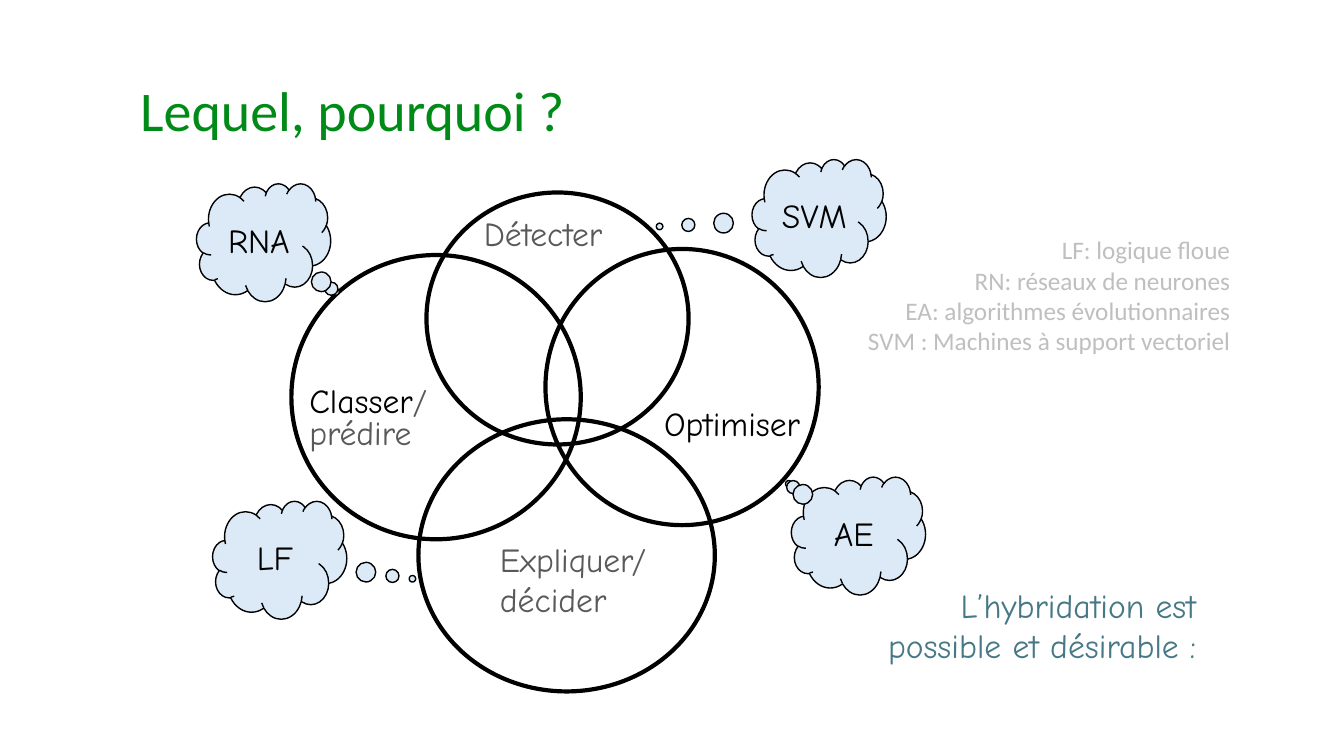
"""Build a slide on which learning method suits which task."""
from pptx import Presentation
from pptx.dml.color import RGBColor
from pptx.enum.shapes import MSO_SHAPE
from pptx.enum.text import MSO_ANCHOR, PP_ALIGN
from pptx.util import Inches, Pt

ELLIPSE, CLOUD = MSO_SHAPE.OVAL, MSO_SHAPE.CLOUD_CALLOUT
TOP, MIDDLE = MSO_ANCHOR.TOP, MSO_ANCHOR.MIDDLE
LEFT, CENTER, RIGHT = PP_ALIGN.LEFT, PP_ALIGN.CENTER, PP_ALIGN.RIGHT

GREEN = RGBColor(0x00, 0x8A, 0x17)
BLACK = RGBColor(0x00, 0x00, 0x00)
GRAY = RGBColor(0x59, 0x59, 0x59)
LIGHT_GRAY = RGBColor(0xBF, 0xBF, 0xBF)
TEAL = RGBColor(0x46, 0x78, 0x86)
PALE_BLUE = RGBColor(0xDC, 0xEA, 0xF7)
BODY_FONT, HAND_FONT = "Calibri", "Comic Neue"

TITLE = "Lequel, pourquoi ?"
TITLE_BOX = (1.29, 0.34, 8.98, 1.57)
CIRCLES = [
    (2.89, 2.53, 2.87, 2.82),
    (5.41, 2.47, 2.71, 2.74),
    (4.15, 4.16, 2.94, 2.7),
    (4.23, 1.91, 2.6, 2.5),
]
CLOUD_SIZE = (1.33, 1.17)
CLOUDS = [
    ("RNA", (1.95, 1.82), (0.54, 0.42)),
    ("AE", (7.85, 4.73), (-0.52, -0.44)),
    ("LF", (2.11, 4.97), (0.99, 0.16)),
    ("SVM", (7.46, 1.58), (-1.19, 0.07)),
]
TASKS = [
    ([("Classer", BLACK), ("/ prédire", GRAY)], (2.97, 3.79, 1.97, 0.75),
     {"spacing": 0.8}),
    ([("Optimiser", BLACK)], (6.27, 3.95, 1.98, 0.5), {"align": CENTER}),
    ([("Expliquer/décider", GRAY)], (4.86, 5.29, 1.89, 0.91), {}),
    ([("Détecter", GRAY)], (4.7, 2.06, 1.65, 0.51), {}),
]
CONCLUSION = "L’hybridation est possible et désirable :"
CONCLUSION_BOX = (8.71, 5.75, 3.25, 1.31)
LEGEND = [
    "LF: logique floue",
    "RN: réseaux de neurones",
    "EA: algorithmes évolutionnaires SVM : Machines à support vectoriel",
]
LEGEND_BOX = (8.48, 2.28, 3.82, 1.31)


def write_text(shape, paragraphs, *, size=24, font=HAND_FONT, align=LEFT,
               anchor=MIDDLE, spacing=None, wrap=True):
    """Fill a shape with paragraphs, each a list of (text, colour) runs."""
    frame = shape.text_frame
    frame.word_wrap = wrap
    frame.vertical_anchor = anchor
    for index, runs in enumerate(paragraphs):
        paragraph = frame.add_paragraph() if index else frame.paragraphs[0]
        paragraph.alignment = align
        paragraph.line_spacing = spacing
        for text, color in runs:
            run = paragraph.add_run()
            run.text = text
            run.font.size = Pt(size)
            run.font.name = font
            run.font.color.rgb = color


def add_outlined(slide, kind, box, width, fill=None):
    """Add a black-outlined shape, filled only when a colour is given."""
    shape = slide.shapes.add_shape(kind, *map(Inches, box))
    shape.shadow.inherit = False
    shape.line.color.rgb = BLACK
    shape.line.width = Pt(width)
    if fill is None:
        shape.fill.background()
    else:
        shape.fill.solid()
        shape.fill.fore_color.rgb = fill
    return shape


def add_text(slide, box, paragraphs, **text_format):
    """Add a formatted text box."""
    text_box = slide.shapes.add_textbox(*map(Inches, box))
    write_text(text_box, paragraphs, **text_format)


def main():
    """Assemble and save the slide."""
    presentation = Presentation()
    presentation.slide_width = Inches(13.33)
    presentation.slide_height = Inches(7.5)
    slide = presentation.slides.add_slide(presentation.slide_layouts[5])

    title = slide.shapes.title
    title.left, title.top, title.width, title.height = map(Inches, TITLE_BOX)
    write_text(title, [[(TITLE, GREEN)]], size=40, font=BODY_FONT, spacing=0.9)

    for box in CIRCLES:
        add_outlined(slide, ELLIPSE, box, 3)

    for method, position, tail in CLOUDS:
        cloud = add_outlined(slide, CLOUD, position + CLOUD_SIZE, 1, PALE_BLUE)
        for index, offset in enumerate(tail):
            cloud.adjustments[index] = offset
        write_text(cloud, [[(method, BLACK)]], align=CENTER, wrap=False)

    for runs, box, text_format in TASKS:
        add_text(slide, box, [runs], **text_format)

    add_text(slide, CONCLUSION_BOX, [[(CONCLUSION, TEAL)]],
             align=RIGHT, anchor=TOP)
    add_text(slide, LEGEND_BOX, [[(line, LIGHT_GRAY)] for line in LEGEND],
             size=18, font=BODY_FONT, align=RIGHT, anchor=TOP)

    presentation.save("out.pptx")


if __name__ == "__main__":
    main()
